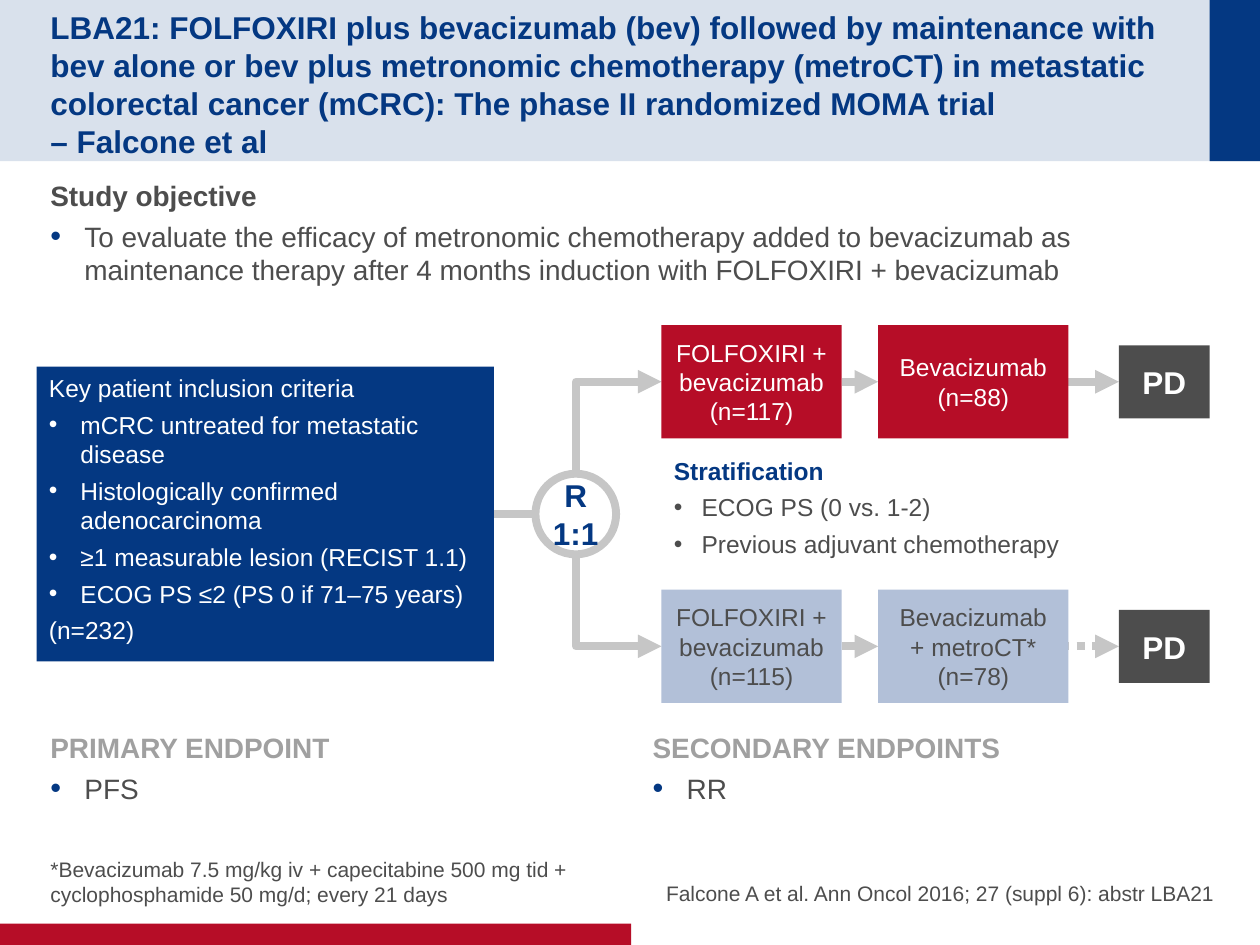
from dataclasses import dataclass

from lxml import etree
from pptx import Presentation
from pptx.dml.color import RGBColor
from pptx.enum.dml import MSO_LINE
from pptx.enum.shapes import MSO_CONNECTOR, MSO_SHAPE
from pptx.enum.text import MSO_ANCHOR, PP_ALIGN
from pptx.oxml.ns import qn
from pptx.util import Inches, Pt

RECTANGLE, ELLIPSE = MSO_SHAPE.RECTANGLE, MSO_SHAPE.OVAL
STRAIGHT, ELBOW = MSO_CONNECTOR.STRAIGHT, MSO_CONNECTOR.ELBOW
TOP, MIDDLE, BOTTOM = MSO_ANCHOR.TOP, MSO_ANCHOR.MIDDLE, MSO_ANCHOR.BOTTOM
LEFT, CENTER, RIGHT = PP_ALIGN.LEFT, PP_ALIGN.CENTER, PP_ALIGN.RIGHT
DOTTED = MSO_LINE.ROUND_DOT


@dataclass(frozen=True)
class Theme:
    font: str = "Arial"
    navy: str = "043882"
    red: str = "B60D27"
    pale_blue: str = "B2C0D8"
    dark: str = "4D4D4D"
    heading_gray: str = "A0A0A0"
    line_gray: str = "C6C6C6"
    white: str = "FFFFFF"
    title: int = 18
    body: int = 16
    diagram: int = 14
    note: int = 12
    line_width: float = 4.5


@dataclass
class Line:
    """One paragraph; a positive indent gives it a bullet."""
    text: str
    size: int
    color: str
    bold: bool = False
    indent: float = 0
    bullet_color: str = ""
    space_after: float = 0


def add_child(parent, tag, **attributes):
    return etree.SubElement(parent, qn(tag), attributes)


class SlideBuilder:
    def __init__(self, slide, theme):
        self.slide = slide
        self.theme = theme

    def add_bullet(self, paragraph, line):
        properties = paragraph._p.get_or_add_pPr()
        properties.set("marL", str(Inches(line.indent)))
        properties.set("indent", str(-Inches(line.indent)))
        if line.bullet_color:
            color = add_child(properties, "a:buClr")
            add_child(color, "a:srgbClr", val=line.bullet_color)
            add_child(properties, "a:buSzPct", val="110000")
        add_child(properties, "a:buFont", typeface=self.theme.font)
        add_child(properties, "a:buChar", char="•")

    def set_text(self, shape, lines, align, anchor, insets, wrap=True):
        frame = shape.text_frame
        frame.word_wrap = wrap
        frame.vertical_anchor = anchor
        (frame.margin_left, frame.margin_top,
         frame.margin_right, frame.margin_bottom) = map(Inches, insets)
        for index, line in enumerate(lines):
            paragraph = frame.add_paragraph() if index else frame.paragraphs[0]
            paragraph.text = line.text
            paragraph.alignment = align
            paragraph.space_after = Pt(line.space_after)
            if line.indent:
                self.add_bullet(paragraph, line)
            font = paragraph.font
            font.name = self.theme.font
            font.size = Pt(line.size)
            font.bold = line.bold
            font.color.rgb = RGBColor.from_string(line.color)

    def text(self, box, lines, align=LEFT, anchor=TOP, insets=(0, 0.05, 0, 0.05)):
        shape = self.slide.shapes.add_textbox(*map(Inches, box))
        self.set_text(shape, lines, align, anchor, insets)

    def block(self, box, fill, lines=(), align=CENTER, anchor=MIDDLE,
              insets=(0.1, 0, 0.1, 0), opacity=100):
        shape = self.slide.shapes.add_shape(RECTANGLE, *map(Inches, box))
        shape.shadow.inherit = False
        shape.fill.solid()
        shape.fill.fore_color.rgb = RGBColor.from_string(fill)
        shape.line.fill.background()
        if opacity < 100:
            color = shape._element.spPr.find(qn("a:solidFill"))[0]
            add_child(color, "a:alpha", val=str(opacity * 1000))
        if lines:
            self.set_text(shape, lines, align, anchor, insets)

    def ring(self, box, lines):
        shape = self.slide.shapes.add_shape(ELLIPSE, *map(Inches, box))
        shape.shadow.inherit = False
        shape.fill.background()
        shape.line.color.rgb = RGBColor.from_string(self.theme.line_gray)
        shape.line.width = Pt(self.theme.line_width)
        self.set_text(shape, lines, CENTER, MIDDLE, (0.1, 0.05, 0.1, 0.05), wrap=False)

    def connector(self, start, end, kind=STRAIGHT, arrow=True, dash=None):
        connector = self.slide.shapes.add_connector(
            kind, *map(Inches, (*start, *end)))
        line = connector.line
        line.color.rgb = RGBColor.from_string(self.theme.line_gray)
        line.width = Pt(self.theme.line_width)
        if dash:
            line.dash_style = dash
        if arrow:
            add_child(connector.get_or_add_ln(), "a:tailEnd", type="triangle")
        add_child(connector._element.spPr, "a:effectLst")
        return connector

    def corner_arrow(self, start, end):
        """Arrow that leaves start vertically, turns once and runs right to end."""
        rise, run = abs(end[1] - start[1]), end[0] - start[0]
        left = (start[0] + end[0] - rise) / 2
        top = (start[1] + end[1] - run) / 2
        connector = self.connector((left, top), (left + rise, top + run), ELBOW)
        properties = connector._element.spPr
        properties.find(qn("a:prstGeom")).set("prst", "bentConnector2")
        transform = properties.find(qn("a:xfrm"))
        upward = end[1] < start[1]
        transform.set("rot", str((90 if upward else 270) * 60000))
        transform.set("flipH", "1")
        if upward:
            transform.set("flipV", "1")


def add_arm(builder, center, fill, color, induction, maintenance, last_dash):
    """Draw one treatment arm, from randomisation to progression."""
    theme = builder.theme
    ring_edge = 3.76 if center < 4.08 else 4.4
    builder.corner_arrow((4.57, ring_edge), (5.25, center))
    builder.connector((6.68, center), (6.97, center))
    builder.connector((8.42, center), (8.88, center), dash=last_dash)
    for left, width, texts in ((5.25, 1.43, induction), (6.97, 1.51, maintenance)):
        lines = [Line(text, theme.diagram, color) for text in texts]
        builder.block((left, center - 0.45, width, 0.9), fill, lines)
    builder.block((8.88, center - 0.29, 0.72, 0.58), theme.dark,
                  [Line("PD", theme.title, theme.white, True)])


def main():
    presentation = Presentation()
    presentation.slide_width, presentation.slide_height = Inches(10), Inches(7.5)
    slide = presentation.slides.add_slide(presentation.slide_layouts[6])
    theme = Theme()
    builder = SlideBuilder(slide, theme)

    def section(heading, bullet, color):
        return [Line(heading, theme.body, color, True, space_after=4),
                Line(bullet, theme.body, theme.dark, indent=0.27,
                     bullet_color=theme.navy, space_after=4)]

    builder.block((0, 0, 10, 1.28), theme.navy, opacity=15)
    builder.block((9.6, 0, 0.4, 1.28), theme.navy)
    builder.block((0, 7.33, 5.01, 0.17), theme.red)
    title = ("LBA21: FOLFOXIRI plus bevacizumab (bev) followed by maintenance with "
             "bev alone or bev plus metronomic chemotherapy (metroCT) in metastatic "
             "colorectal cancer (mCRC): The phase II randomized MOMA trial\v"
             "– Falcone et al")
    builder.text((0.4, 0.2, 9.01, 0.88), [Line(title, theme.title, theme.navy, True)],
                 anchor=MIDDLE, insets=(0, 0.05, 0, 0))
    objective = ("To evaluate the efficacy of metronomic chemotherapy added to "
                 "bevacizumab as maintenance therapy after 4 months induction with "
                 "FOLFOXIRI + bevacizumab")
    builder.text((0.4, 1.37, 9.2, 0.96),
                 section("Study objective", objective, theme.dark))

    criteria = (("Key patient inclusion criteria", 0),
                ("mCRC untreated for metastatic disease", 0.25),
                ("Histologically confirmed adenocarcinoma", 0.25),
                ("≥1 measurable lesion (RECIST 1.1)", 0.25),
                ("ECOG PS ≤2 (PS 0 if 71–75 years)", 0.25),
                ("(n=232)", 0))
    builder.connector((3.92, 4.08), (4.25, 4.08), arrow=False)
    builder.block((0.29, 2.91, 3.63, 2.34), theme.navy,
                  [Line(text, theme.diagram, theme.white, indent=indent, space_after=4.2)
                   for text, indent in criteria],
                  LEFT, TOP, (0.1, 0.05, 0.1, 0.05))
    add_arm(builder, 3.03, theme.red, theme.white,
            ["FOLFOXIRI + bevacizumab (n=117)"], ["Bevacizumab (n=88)"], None)
    add_arm(builder, 5.13, theme.pale_blue, theme.dark,
            ["FOLFOXIRI + bevacizumab", "(n=115)"],
            ["Bevacizumab + metroCT*", "(n=78)"], DOTTED)
    builder.ring((4.25, 3.76, 0.64, 0.64),
                 [Line(text, theme.title, theme.navy, True) for text in ("R", "1:1")])
    factors = ("ECOG PS (0 vs. 1-2)", "Previous adjuvant chemotherapy")
    builder.text((5.25, 3.57, 3.36, 0.98),
                 [Line("Stratification", theme.diagram, theme.navy, True, space_after=4)]
                 + [Line(text, theme.diagram, theme.dark, indent=0.22, space_after=4)
                    for text in factors], insets=(0.1, 0.05, 0.1, 0.05))

    for left, heading, endpoint in ((0.4, "PRIMARY ENDPOINT", "PFS"),
                                    (5.18, "SECONDARY ENDPOINTS", "RR")):
        builder.text((left, 5.75, 4.42, 0.9),
                     section(heading, endpoint, theme.heading_gray))
    footnote = ("*Bevacizumab 7.5 mg/kg iv + capecitabine 500 mg tid + "
                "cyclophosphamide 50 mg/d; every 21 days")
    citation = "Falcone A et al. Ann Oncol 2016; 27 (suppl 6): abstr LBA21"
    for box, text, align in (((0.4, 6.67, 4.52, 0.53), footnote, LEFT),
                             ((4.79, 6.66, 4.85, 0.53), citation, RIGHT)):
        builder.text(box, [Line(text, theme.note, theme.dark, space_after=4)],
                     align, BOTTOM, (0, 0, 0, 0))
    presentation.save("out.pptx")


if __name__ == "__main__":
    main()
